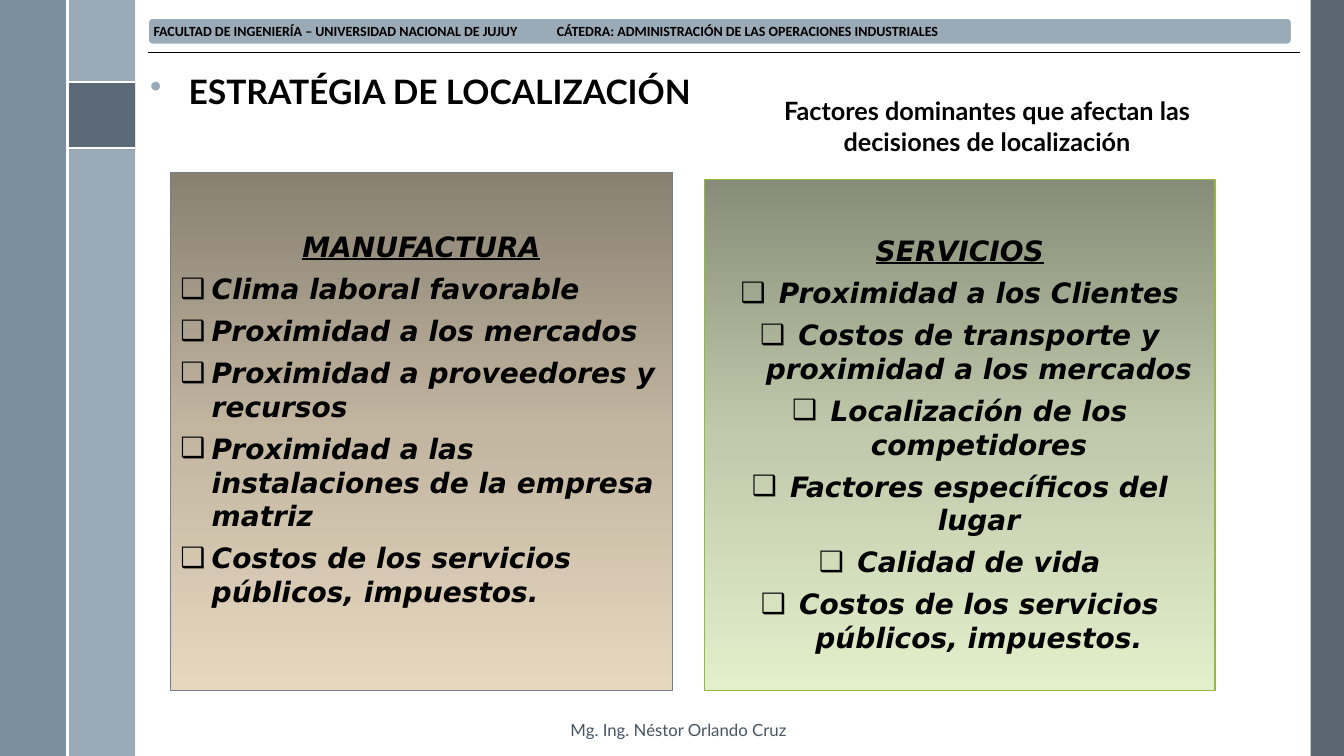
from lxml import etree
from pptx import Presentation
from pptx.dml.color import RGBColor
from pptx.enum.shapes import MSO_CONNECTOR, MSO_SHAPE
from pptx.enum.text import MSO_ANCHOR, MSO_AUTO_SIZE, PP_ALIGN
from pptx.oxml import parse_xml
from pptx.oxml.ns import qn
from pptx.util import Inches, Pt

COLORS = {
    "slate": "475562", "steel": "6A8093", "mist": "9BAAB7", "white": "FFFFFF",
    "black": "000000", "footer": "465562", "brown_edge": "737E87", "green_edge": "95B845",
}
DRAWING_NS = "http://schemas.openxmlformats.org/drawingml/2006/main"


def paint(shape, color, opacity=100):
    shape.shadow.inherit = False
    shape.fill.solid()
    shape.fill.fore_color.rgb = RGBColor.from_string(COLORS[color])
    shape.line.fill.background()
    if opacity < 100:
        tint = shape.element.spPr.find(".//" + qn("a:srgbClr"))
        etree.SubElement(tint, qn("a:alpha")).set("val", str(opacity * 1000))


def style(para, font, size, color="black", bold=True, align=PP_ALIGN.LEFT, bullet=None, indent=0):
    para.alignment = align
    para.line_spacing = 1.0
    para.space_before = Pt(0)
    for span in para.runs:
        span.font.name, span.font.size, span.font.bold = font, Pt(size), bold
        span.font.color.rgb = RGBColor.from_string(COLORS[color])
    props = para._p.get_or_add_pPr()
    props.set("marL", str(Inches(indent)))
    props.set("indent", str(-Inches(indent)))
    if bullet:
        etree.SubElement(props, qn("a:buChar")).set("char", bullet)
    else:
        etree.SubElement(props, qn("a:buNone"))


deck = Presentation()
deck.slide_width, deck.slide_height = Inches(13.33), Inches(7.5)
page = deck.slides.add_slide(deck.slide_layouts[3])
shapes = page.shapes
title, *lists = page.placeholders

# Side bands and the square badge
band = 0.67
for left, top, width, height, color, opacity in [
    (13, 0, 0.33, 7.5, "slate", 90),
    (band, 0, band, 7.5, "mist", 100),
    (0, 0, band, 7.5, "steel", 88),
    (band, 0.81, band, band, "slate", 75),
]:
    strip = shapes.add_shape(MSO_SHAPE.RECTANGLE, Inches(left), Inches(top), Inches(width), Inches(height))
    paint(strip, color, opacity)

# Pi symbol
pi_points = [
    (1.18, 0.98), (0.9, 0.98), (0.86, 0.99), (0.84, 1.02), (0.83, 1.04), (0.84, 1.05),
    (0.85, 1.05), (0.87, 1.02), (0.9, 1.01), (0.94, 1.01), (0.93, 1.13), (0.91, 1.22),
    (0.88, 1.27), (0.88, 1.29), (0.9, 1.29), (0.94, 1.21), (0.96, 1.1), (0.97, 1.01),
    (1.06, 1.01), (1.05, 1.22), (1.05, 1.26), (1.07, 1.29), (1.1, 1.3), (1.14, 1.29),
    (1.17, 1.26), (1.19, 1.22), (1.18, 1.21), (1.16, 1.22), (1.14, 1.26), (1.11, 1.28),
    (1.08, 1.27), (1.07, 1.22), (1.09, 1.01), (1.18, 1.01), (1.19, 1),
]
outline = shapes.build_freeform(*pi_points[0], scale=Inches(1))
outline.add_line_segments(pi_points[1:], close=True)
paint(outline.convert_to_shape(), "white")

# White band edges and the header rule
for start_x, start_y, end_x, end_y, color, weight in [
    (band, 0.81, 2 * band, 0.81, "white", 1.5),
    (band, 1.47, 2 * band, 1.47, "white", 1.5),
    (band, 0, band, 7.5, "white", 1.5),
    (1.47, 0.52, 12.89, 0.52, "black", 0.5),
]:
    rule = shapes.add_connector(MSO_CONNECTOR.STRAIGHT, Inches(start_x), Inches(start_y), Inches(end_x), Inches(end_y))
    rule.line.color.rgb = RGBColor.from_string(COLORS[color])
    rule.line.width = Pt(weight)
    etree.SubElement(rule.element.spPr, qn("a:effectLst"))

# Header bar, with the course name set at a tab stop
header = shapes.add_shape(MSO_SHAPE.ROUNDED_RECTANGLE, Inches(1.47), Inches(0.18), Inches(11.34), Inches(0.26))
paint(header, "mist")
header.line.color.rgb = RGBColor.from_string(COLORS["white"])
header.line.width = Pt(1)
frame = header.text_frame
frame.margin_left = frame.margin_right = Inches(0.04)
frame.margin_top = frame.margin_bottom = 0
frame.vertical_anchor = MSO_ANCHOR.MIDDLE
frame.text = ("FACULTAD DE INGENIERÍA – UNIVERSIDAD NACIONAL DE JUJUY\t"
              "CÁTEDRA: ADMINISTRACIÓN DE LAS OPERACIONES INDUSTRIALES")
style(frame.paragraphs[0], "Calibri", 10)
tabs = etree.SubElement(frame.paragraphs[0]._p.pPr, qn("a:tabLst"))
etree.SubElement(tabs, qn("a:tab"), pos=str(Inches(5.25)), algn="l")

# Title
title.left, title.top, title.width, title.height = Inches(1.39), Inches(0.65), Inches(6.13), Inches(0.75)
title.text_frame.text = "ESTRATÉGIA DE LOCALIZACIÓN"
title.text_frame.vertical_anchor = MSO_ANCHOR.TOP
title.text_frame.auto_size = MSO_AUTO_SIZE.NONE
style(title.text_frame.paragraphs[0], "Lato", 24, bullet="•", indent=0.38)
bullet_color = etree.Element(qn("a:buClr"))
etree.SubElement(bullet_color, qn("a:srgbClr")).set("val", COLORS["mist"])
title.text_frame.paragraphs[0]._p.pPr.find(qn("a:buChar")).addprevious(bullet_color)

# Subtitle and author
for left, top, width, height, text, size, color, bold, align in [
    (7.52, 0.9, 4.54, 0.71, "Factores dominantes que afectan las decisiones de localización",
     18, "black", True, PP_ALIGN.CENTER),
    (5.56, 7.09, 3.23, 0.3, "Mg. Ing. Néstor Orlando Cruz", 12, "footer", False, PP_ALIGN.LEFT),
]:
    box = shapes.add_textbox(Inches(left), Inches(top), Inches(width), Inches(height))
    box.text_frame.word_wrap = True
    box.text_frame.text = text
    style(box.text_frame.paragraphs[0], "Lato", size, color, bold, align)

# Gradient panels, each with its list on top
panels = [
    ((1.69, 1.71, 4.98, 5.14), (2.23, 3.89), ["888071", "C2B6A1", "E6D7BF"], "brown_edge", PP_ALIGN.LEFT, 0.31,
     ["MANUFACTURA", "Clima laboral favorable", "Proximidad a los mercados",
      "Proximidad a proveedores y recursos",
      "Proximidad a las instalaciones de la empresa matriz",
      "Costos de los servicios públicos, impuestos."]),
    ((6.99, 1.78, 5.06, 5.07), (2.27, 4.31), ["878D78", "C0C9AB", "E3EFCB"], "green_edge", PP_ALIGN.CENTER, 0.38,
     ["SERVICIOS", "Proximidad a los Clientes",
      "Costos de transporte y proximidad a los mercados",
      "Localización de los competidores", "Factores específicos del lugar",
      "Calidad de vida", "Costos de los servicios públicos, impuestos."]),
]
for body, (area, (text_top, text_height), shades, edge, align, indent, lines) in zip(lists, panels):
    panel = shapes.add_shape(MSO_SHAPE.RECTANGLE, *[Inches(length) for length in area])
    paint(panel, "white")
    panel.line.color.rgb = RGBColor.from_string(COLORS[edge])
    panel.line.width = Pt(1)
    stops = "".join(f'<a:gs pos="{i * 50000}"><a:srgbClr val="{shade}"/></a:gs>' for i, shade in enumerate(shades))
    gradient = parse_xml(f'<a:gradFill xmlns:a="{DRAWING_NS}" rotWithShape="1"><a:gsLst>{stops}</a:gsLst>'
                         '<a:lin ang="5400000" scaled="0"/></a:gradFill>')
    properties = panel.element.spPr
    properties.replace(properties.find(qn("a:solidFill")), gradient)

    panel.element.addnext(body.element)
    body.left, body.width = panel.left, panel.width
    body.top, body.height = Inches(text_top), Inches(text_height)
    body.text_frame.auto_size = MSO_AUTO_SIZE.NONE
    body.text_frame.text = "\n".join(lines)
    heading, *items = body.text_frame.paragraphs
    style(heading, "DejaVu Sans", 20, align=PP_ALIGN.CENTER)
    heading.runs[0].font.underline = True
    for item in items:
        style(item, "DejaVu Sans", 20, align=align, bullet="❑", indent=indent)
    for para in body.text_frame.paragraphs:
        para.space_after = Pt(6)
        para.runs[0].font.italic = True

deck.save("out.pptx")
